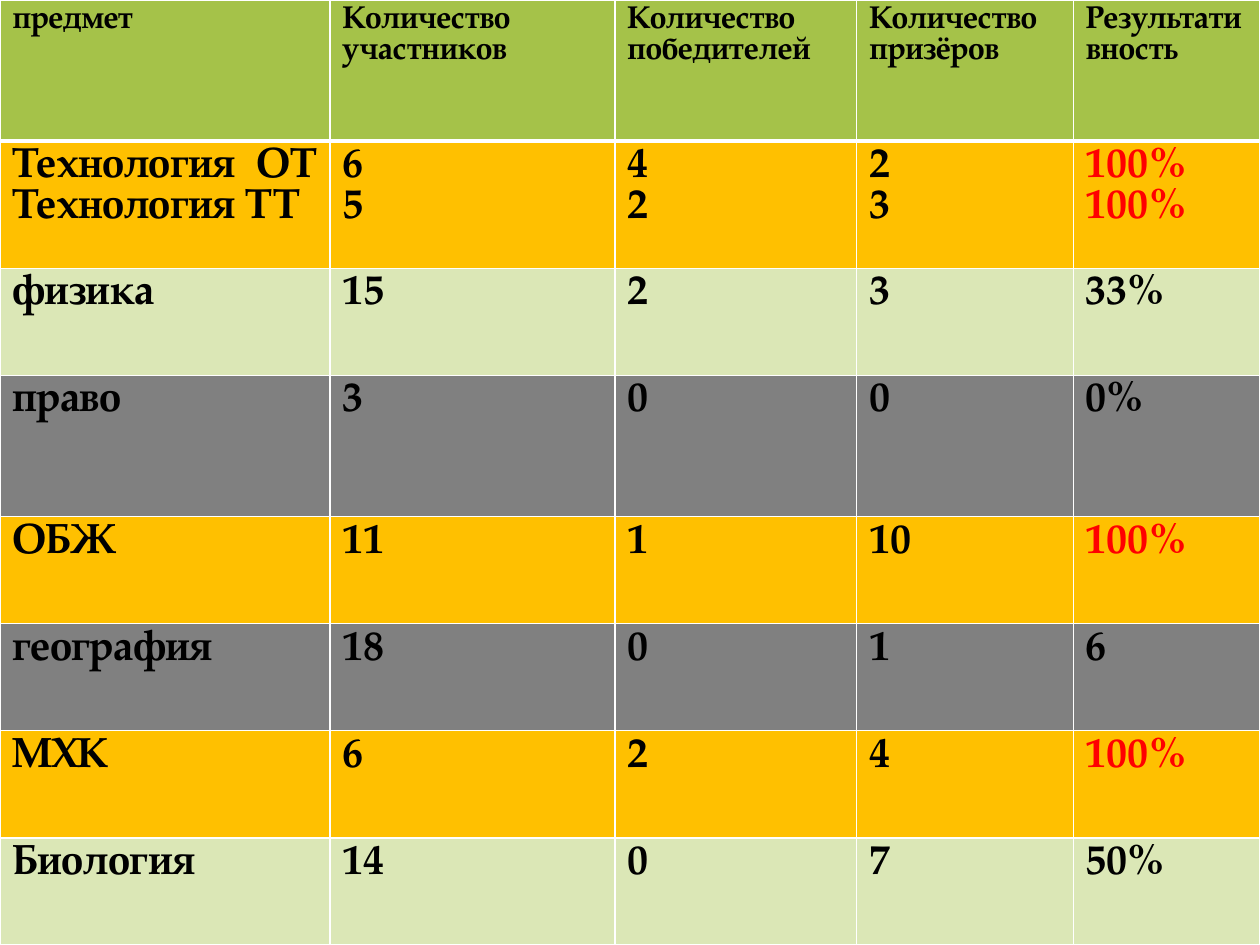
import pptx
import pptx.dml.color
import pptx.oxml
import pptx.oxml.ns
import pptx.util

Inches = pptx.util.Inches

FONT = "TeX Gyre Pagella"
BLACK, WHITE, RED = "000000", "FFFFFF", "FF0000"
GREEN, GOLD, PALE, GRAY = "A5C249", "FFC000", "DBE7B6", "808080"

COLUMN_WIDTHS = [2.62, 2.26, 1.92, 1.72, 1.48]
ROWS = [
    (1.12, GREEN, ["предмет", "Количество участников", "Количество победителей",
                   "Количество\nпризёров", "Результативность"]),
    (1.01, GOLD, ["Технология  ОТ\nТехнология ТТ", "6\n5", "4\n2", "2\n3", "100%\n100%"]),
    (0.85, PALE, ["физика", "15", "2", "3", "33%"]),
    (1.12, GRAY, ["право", "3", "0", "0", "0%"]),
    (0.85, GOLD, ["ОБЖ", "11", "1", "10", "100%"]),
    (0.85, GRAY, ["география", "18", "0", "1", "6"]),
    (0.85, GOLD, ["МХК", "6", "2", "4", "100%"]),
    (0.85, PALE, ["Биология", "14", "0", "7", "50%"]),
]


def color(value):
    return pptx.dml.color.RGBColor.from_string(value)


def paint(fill, value):
    fill.solid()
    fill.fore_color.rgb = color(value)


def write(cell, text, size, ink):
    cell.text_frame.text = text
    for para in cell.text_frame.paragraphs:
        for span in para.runs:
            span.font.name = FONT
            span.font.size = pptx.util.Pt(size)
            span.font.bold = True
            span.font.color.rgb = color(ink)


def add_borders(cell, top, bottom):
    properties = cell._tc.get_or_add_tcPr()
    sides = [("lnL", 1), ("lnR", 1), ("lnT", top), ("lnB", bottom)]
    for index, (side, points) in enumerate(sides):
        line = pptx.oxml.parse_xml(
            f'<a:{side} {pptx.oxml.ns.nsdecls("a")} w="{pptx.util.Pt(points)}">'
            f'<a:solidFill><a:srgbClr val="{WHITE}"/></a:solidFill></a:{side}>')
        properties.insert(index, line)


def main():
    deck = pptx.Presentation()
    deck.slide_width, deck.slide_height = Inches(10), Inches(7.5)
    page = deck.slides.add_slide(deck.slide_layouts[6])
    paint(page.background.fill, BLACK)
    table = page.shapes.add_table(len(ROWS), len(COLUMN_WIDTHS), 0, 0,
                                  deck.slide_width, deck.slide_height).table
    for column, width in zip(table.columns, COLUMN_WIDTHS):
        column.width = Inches(width)
    for row_index, (height, fill, texts) in enumerate(ROWS):
        table.rows[row_index].height = Inches(height)
        for column_index, text in enumerate(texts):
            cell = table.cell(row_index, column_index)
            paint(cell.fill, fill)
            write(cell, text, size=18 if row_index == 0 else 24,
                  ink=RED if text.startswith("100%") else BLACK)
            add_borders(cell, top=3 if row_index == 1 else 1,
                        bottom=3 if row_index == 0 else 1)
    deck.save("out.pptx")


if __name__ == "__main__":
    main()
